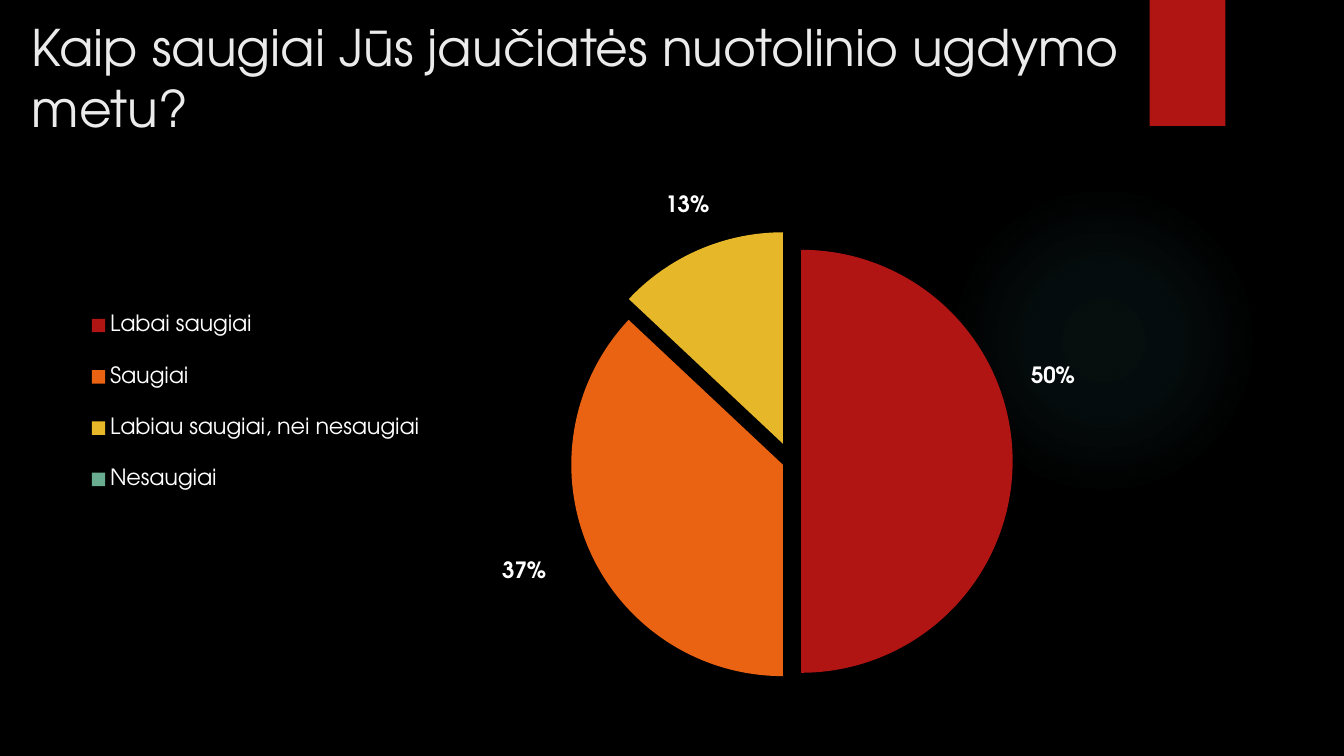
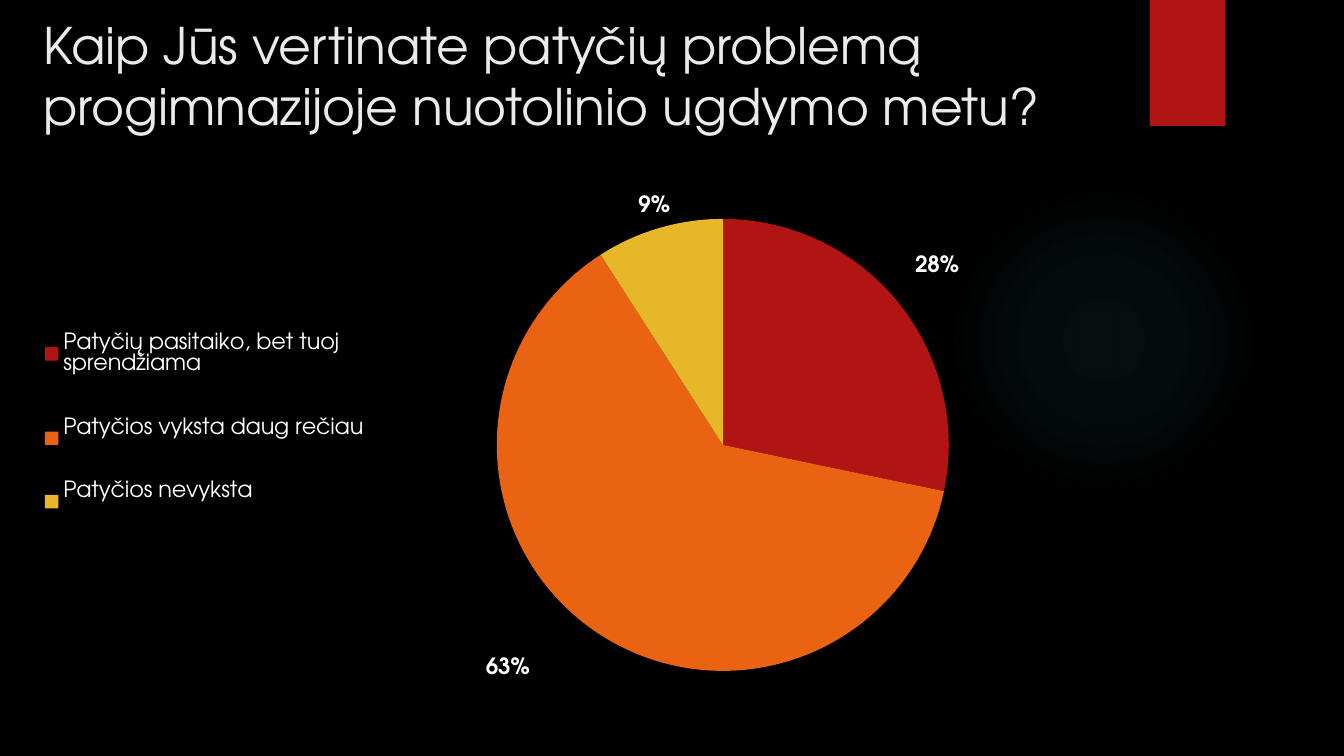
from pptx import Presentation
from pptx.chart.data import CategoryChartData
from pptx.dml.color import RGBColor
from pptx.enum.chart import XL_CHART_TYPE, XL_LABEL_POSITION, XL_LEGEND_POSITION
from pptx.enum.shapes import MSO_SHAPE
from pptx.enum.text import MSO_ANCHOR
from pptx.oxml import parse_xml
from pptx.oxml.ns import nsdecls, qn
from pptx.util import Pt

PIE = XL_CHART_TYPE.PIE
OUT = XL_LABEL_POSITION.OUTSIDE_END
RIGHT = XL_LEGEND_POSITION.RIGHT
RECT, OVAL = MSO_SHAPE.RECTANGLE, MSO_SHAPE.OVAL
TOP = MSO_ANCHOR.TOP

PX = 9525
SIZE = (1280, 720)
FACE = "TeX Gyre Adventor"
HUES = {
    "back": "000000",
    "title": "EBEBEB",
    "text": "FFFFFF",
    "band": "B01513",
    "glow": "50B9C1",
}
SLICES = ["B01513", "EA6312", "E6B729", "6AAC90"]
FORMS = {
    "title": {"name": FACE, "size": Pt(36), "bold": False},
    "legend": {"name": FACE, "size": Pt(16), "bold": False},
    "label": {"name": FACE, "size": Pt(16), "bold": True},
}
GLOW = [(0, 7), (36, 6), (69, 0)]

PAGES = [
    {
        "title": "Kaip saugiai Jūs jaučiatės nuotolinio ugdymo metu?",
        "head": (21, 11, 1069, 147),
        "box": (42, 143, 1185, 534),
        "cats": ["Labai saugiai", "Saugiai",
                 "Labiau saugiai, nei nesaugiai", "Nesaugiai"],
        "vals": [50, 37, 13, 0],
        "plot": (0.43, 0.15, 0.34, 0.81),
        "key": (0.03, 0.24, 0.28, 0.42),
        "moves": [(0.01, -0.15), (-0.03, 0.02), (0.01, -0.05)],
        "bursts": [5, 4, 9],
    },
    {
        "title": "Kaip Jūs vertinate patyčių problemą "
                 "progimnazijoje nuotolinio ugdymo metu?",
        "head": (32, 9, 1067, 147),
        "box": (24, 156, 1176, 525),
        "cats": ["Patyčių pasitaiko, bet tuoj sprendžiama",
                 "Patyčios vyksta daug rečiau", "Patyčios nevyksta"],
        "vals": [28, 62, 9],
        "plot": (0.38, 0.1, 0.37, 0.82),
        "key": (0.01, 0.23, 0.27, 0.46),
        "moves": [(0.01, -0.04), (-0.05, 0.04), (0.01, -0.01)],
        "bursts": [],
    },
]


def emu(box):
    """Turn a box in px into EMU."""
    return [n * PX for n in box]


def tint(hue):
    """Give the colour for a hex string."""
    return RGBColor.from_string(hue)


def style(font, form, hue):
    """Set a font from its named format and colour."""
    for name, value in FORMS[form].items():
        setattr(font, name, value)
    font.color.rgb = tint(HUES[hue])


def shape(slide, kind, box):
    """Add a preset shape with no line and no shadow."""
    item = slide.shapes.add_shape(kind, *emu(box))
    item.line.fill.background()
    item.shadow.inherit = False
    return item


def decor(slide, box):
    """Paint the background, the soft glow and the red band in the box."""
    left, top, wide, _ = box
    fill = slide.background.fill
    fill.solid()
    fill.fore_color.rgb = tint(HUES["back"])
    glow = shape(slide, OVAL, (left + wide - 377, top + 176, 296, 296))
    stops = "".join(
        f'<a:gs pos="{pos * 1000}"><a:srgbClr val="{HUES["glow"]}">'
        f'<a:alpha val="{alpha * 1000}"/></a:srgbClr></a:gs>'
        for pos, alpha in GLOW)
    glow._element.spPr.insert(2, parse_xml(
        f'<a:gradFill {nsdecls("a")}><a:gsLst>{stops}</a:gsLst>'
        '<a:path path="circle"><a:fillToRect l="50000" t="50000" '
        'r="50000" b="50000"/></a:path></a:gradFill>'))
    band = shape(slide, RECT, (left + wide - 185, top, 72, 120))
    band.fill.solid()
    band.fill.fore_color.rgb = tint(HUES["band"])


def title(slide, box, text):
    """Write the slide title in the box."""
    frame = slide.shapes.add_textbox(*emu(box)).text_frame
    frame.word_wrap = True
    frame.vertical_anchor = TOP
    run = frame.paragraphs[0].add_run()
    run.text = text
    style(run.font, "title", "title")


def layout(host, spot, dims, inner=False):
    """Give a chart part a manual layout in fractions of the chart."""
    for old in host.findall(qn("c:layout")):
        host.remove(old)
    tags = []
    if inner:
        tags.append(("layoutTarget", "inner"))
    if len(dims) == 4:
        tags += [("xMode", "edge"), ("yMode", "edge")]
    tags += zip("xywh", dims)
    body = "".join(f'<c:{tag} val="{val}"/>' for tag, val in tags)
    host.insert(spot, parse_xml(
        f'<c:layout {nsdecls("c")}><c:manualLayout>{body}'
        '</c:manualLayout></c:layout>'))


def labels(series, moves):
    """Show shifted percent labels on the leading slices."""
    series.data_labels.show_value = False
    for i in range(len(moves)):
        label = series.points[i].data_label
        style(label.font, "label", "text")
        label.position = OUT
    root = series._element
    for node, move in zip(root.xpath(".//c:dLbl"), moves):
        layout(node, 1, move)
        node.find(qn("c:showVal")).set("val", "0")
        node.find(qn("c:showPercent")).set("val", "1")
    for node in root.xpath(".//c:showLeaderLines"):
        node.set("val", "0")


def pie(slide, box, page):
    """Draw the pie chart with its legend in the box."""
    data = CategoryChartData()
    data.categories = page["cats"]
    data.add_series("Series 1", page["vals"])
    chart = slide.shapes.add_chart(PIE, *emu(box), data).chart
    chart.has_title = False
    style(chart.font, "legend", "text")
    chart.has_legend = True
    key = chart.legend
    key.position = RIGHT
    key.include_in_layout = False
    style(key.font, "legend", "text")
    layout(key._element, 1, page["key"])
    plot = chart.plots[0]
    plot.vary_by_categories = True
    layout(chart._chartSpace.chart.plotArea, 0, page["plot"], True)
    series = plot.series[0]
    for i, hue in zip(range(len(page["vals"])), SLICES):
        form = series.points[i].format
        form.fill.solid()
        form.fill.fore_color.rgb = tint(hue)
        form.line.fill.background()
    for node, burst in zip(series._element.xpath("c:dPt"), page["bursts"]):
        node.insert(1, parse_xml(
            f'<c:explosion {nsdecls("c")} val="{burst}"/>'))
    labels(series, page["moves"])


def main():
    """Build the slides and save them."""
    deck = Presentation()
    deck.slide_width, deck.slide_height = emu(SIZE)
    for page in PAGES:
        slide = deck.slides.add_slide(deck.slide_layouts[6])
        decor(slide, (0, 0, *SIZE))
        title(slide, page["head"], page["title"])
        pie(slide, page["box"], page)
    deck.save("out.pptx")


if __name__ == "__main__":
    main()
